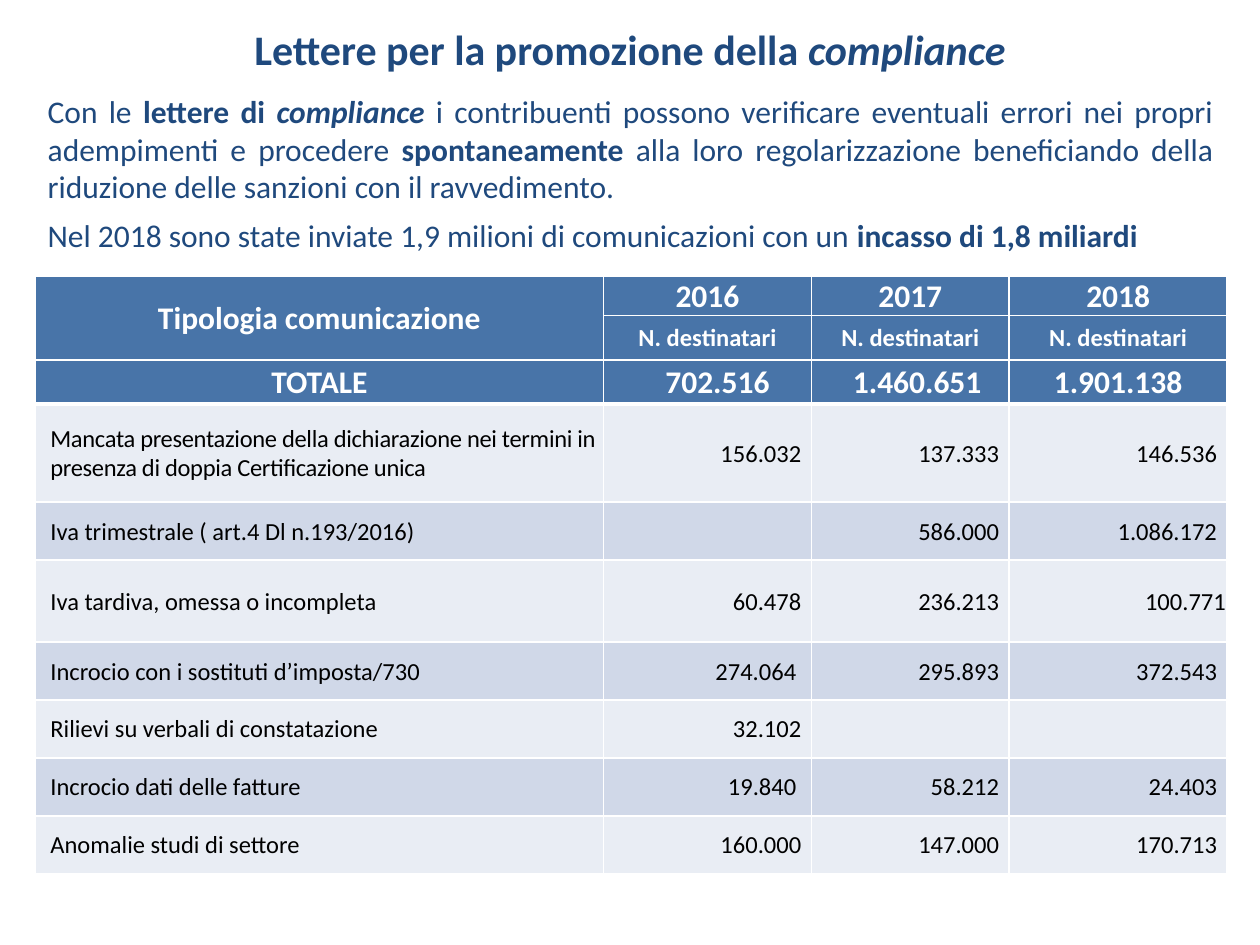
from pptx import Presentation
from pptx.dml.color import RGBColor
from pptx.enum.text import MSO_ANCHOR as Anchor, MSO_AUTO_SIZE as AutoSize, PP_ALIGN as Align
from pptx.oxml import parse_xml
from pptx.oxml.ns import nsdecls
from pptx.util import Inches, Pt

NAVY, BLUE, WHITE, BLACK = "1F497D", "4874A8", "FFFFFF", "000000"
BANDS = ["E9EDF4", "D0D8E8"]


def style_font(font, size, color, bold=None):
    font.name = "Calibri"
    font.size = Pt(size)
    font.color.rgb = RGBColor.from_string(color)
    font.bold = bold


def style_cell(cell, text, size, color, fill, align, left=0.01, right=0.01, top_line=1, bottom_line=1):
    properties = cell._tc.get_or_add_tcPr()
    for side, width in zip("LRTB", (1, 1, top_line, bottom_line)):
        properties.append(parse_xml(
            f'<a:ln{side} {nsdecls("a")} w="{Pt(width)}"><a:solidFill>'
            f'<a:srgbClr val="{WHITE}"/></a:solidFill></a:ln{side}>'))
    cell.fill.solid()
    cell.fill.fore_color.rgb = RGBColor.from_string(fill)
    cell.vertical_anchor = Anchor.MIDDLE
    cell.margin_left, cell.margin_right = Inches(left), Inches(right)
    cell.margin_top, cell.margin_bottom = Inches(0.01), 0
    para = cell.text_frame.paragraphs[0]
    para.alignment = align
    style_font(para.font, size, color, color == WHITE)
    if text:
        para.add_run().text = text


deck = Presentation()
deck.slide_width, deck.slide_height = Inches(10), Inches(7.5)
page = deck.slides.add_slide(deck.slide_layouts[6])

title_paras = [[("Lettere per la promozione della ", True, False), ("compliance", True, True)]]
intro_paras = [
    [("Con le ", False, False), ("lettere di ", True, False), ("compliance", True, True),
     (" i contribuenti possono verificare eventuali errori nei propri adempimenti e procedere ", False, False),
     ("spontaneamente", True, False),
     (" alla loro regolarizzazione beneficiando della riduzione delle sanzioni con il ravvedimento.", False, False)],
    [("Nel 2018 sono state inviate 1,9 milioni di comunicazioni con un ", False, False),
     ("incasso di 1,8 miliardi", True, False)],
]

table_shape = page.shapes.add_table(10, 4, Inches(0.28), Inches(2.19), Inches(9.45), Inches(4.72))
table = table_shape.table
table.first_row = table.horz_banding = False
for column, width in zip(table.columns, [4.51, 1.65, 1.57, 1.73]):
    column.width = Inches(width)
for row, height in zip(table.rows, [0.3, 0.35, 0.35, 0.78, 0.46, 0.65, 0.46, 0.46, 0.46, 0.46]):
    row.height = Inches(height)

headers = [
    (18, ["Tipologia comunicazione", "2016", "2017", "2018"]),
    (14, ["", "N. destinatari", "N. destinatari", "N. destinatari"]),
    (18, ["TOTALE", "702.516", "1.460.651", "1.901.138"]),
]
total_lefts = [0.01, 0.17, 0.12, 0.01]
for row, (size, texts) in enumerate(headers):
    is_total = row == 2
    for column, text in enumerate(texts):
        style_cell(table.cell(row, column), text, size, WHITE, BLUE, Align.CENTER,
                   left=total_lefts[column] if is_total else 0.01,
                   bottom_line=2.25 if is_total else 1)
table.cell(0, 0).merge(table.cell(1, 0))

letters = [
    ("Mancata presentazione della dichiarazione nei termini in presenza di doppia Certificazione unica",
     "156.032", "137.333", "146.536"),
    ("Iva trimestrale ( art.4 Dl n.193/2016)", "", "586.000", "1.086.172"),
    ("Iva tardiva, omessa o incompleta", "60.478", "236.213", "100.771"),
    ("Incrocio con i sostituti d’imposta/730", "274.064", "295.893", "372.543"),
    ("Rilievi su verbali di constatazione", "32.102", "", ""),
    ("Incrocio dati delle fatture", "19.840", "58.212", "24.403"),
    ("Anomalie studi di settore", "160.000", "147.000", "170.713"),
]
right_margins = {"100.771": 0.01, "274.064": 0.12, "19.840": 0.12}
for index, (label, *counts) in enumerate(letters):
    row, fill = index + 3, BANDS[index % 2]
    top_line = 2.25 if index == 0 else 1
    style_cell(table.cell(row, 0), label, 14, BLACK, fill, Align.LEFT, left=0.12, top_line=top_line)
    for column, count in enumerate(counts, 1):
        style_cell(table.cell(row, column), count, 14, BLACK, fill, Align.RIGHT,
                   right=right_margins.get(count, 0.08), top_line=top_line)
label_span = table.cell(3, 0).text_frame.paragraphs[0].runs[0]
label_span._r.get_or_add_rPr().set("spc", "-20")

for bounds, paras, size, align, space in [
    ((1.18, 0.14, 7.64, 0.5), title_paras, 24, Align.CENTER, 0),
    ((0.28, 0.68, 9.45, 1.82), intro_paras, 18, Align.JUSTIFY, 6),
]:
    box = page.shapes.add_textbox(*map(Inches, bounds))
    frame = box.text_frame
    frame.word_wrap = True
    frame.auto_size = AutoSize.SHAPE_TO_FIT_TEXT
    for index, spans in enumerate(paras):
        para = frame.add_paragraph() if index else frame.paragraphs[0]
        para.alignment = align
        para.space_after = Pt(space)
        style_font(para.font, size, NAVY)
        for text, bold, italic in spans:
            span = para.add_run()
            span.text = text
            span.font.bold, span.font.italic = bold, italic

deck.save("out.pptx")
